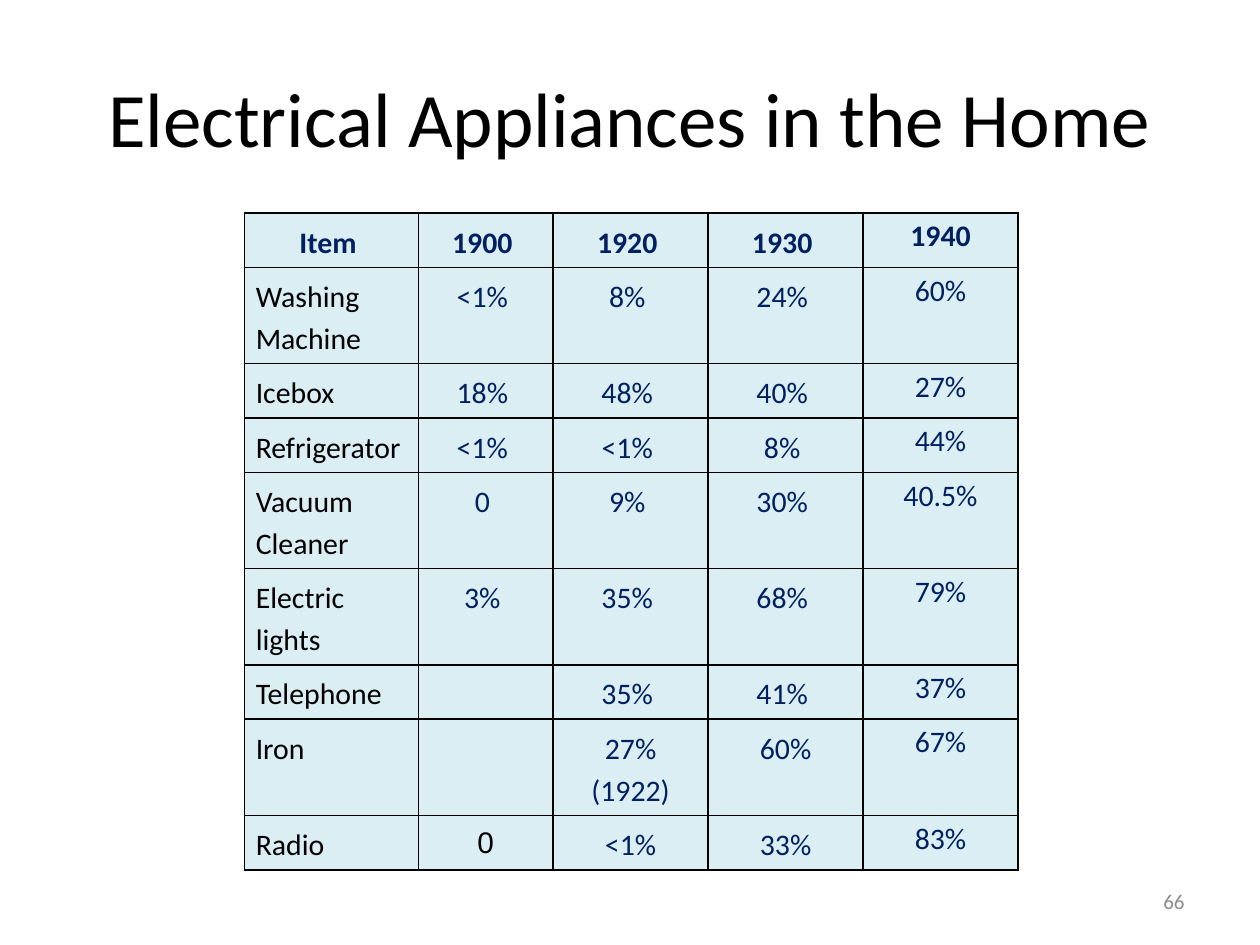
from dataclasses import dataclass

from lxml.etree import SubElement
from pptx import Presentation
from pptx.dml.color import RGBColor
from pptx.enum.text import MSO_ANCHOR, PP_ALIGN
from pptx.oxml.ns import qn
from pptx.slide import Slide
from pptx.table import _Cell
from pptx.text.text import TextFrame
from pptx.util import Inches, Pt


@dataclass(frozen=True)
class Theme:
    """Fonts, colours and type sizes of the slide."""
    font: str = "Calibri"
    alternate_font: str = "Arial"
    ink: str = "000000"
    navy: str = "002060"
    grey: str = "8C8C8C"
    cell_fill: str = "DBEEF4"
    title_size: float = 44
    table_size: float = 17
    number_size: float = 12
    border_width: float = 1
    line_spacing: float = 1.15


@dataclass(frozen=True)
class Area:
    """A rectangle in inches."""
    left: float
    top: float
    width: float
    height: float

    def lengths(self) -> tuple:
        """Return left, top, width and height as slide lengths."""
        return tuple(Inches(n) for n in (self.left, self.top, self.width, self.height))


@dataclass(frozen=True)
class Style:
    """Look of one run and its paragraph."""
    size: float
    color: str
    align: PP_ALIGN = PP_ALIGN.CENTER
    bold: bool = False
    font: str = "Calibri"


@dataclass(frozen=True)
class Appliance:
    """One table row: an item and its share of homes by year."""
    item: str
    shares: tuple[str, ...]
    lines: int = 1


THEME = Theme()
TITLE_AREA = Area(0.5, 0.3, 9, 1.25)
TABLE_AREA = Area(1.94, 1.69, 6.14, 4.97)
NUMBER_AREA = Area(7.17, 6.95, 2.33, 0.4)
COLUMN_WIDTHS = (1.38, 1.07, 1.23, 1.23, 1.23)
ROW_HEIGHTS = {1: 0.41, 2: 0.73}
ROWS = (
    Appliance("Item ", ("1900 ", "1920 ", "1930 ", "1940")),
    Appliance("Washing Machine", ("<1% ", "8% ", "24% ", "60%"), 2),
    Appliance("Icebox", ("18% ", "48% ", "40% ", "27%")),
    Appliance("Refrigerator", ("<1% ", "<1% ", "8% ", "44%")),
    Appliance("Vacuum Cleaner", ("0 ", "9% ", "30% ", "40.5%"), 2),
    Appliance("Electric lights", ("3% ", "35% ", "68% ", "79%"), 2),
    Appliance("Telephone", ("", "35% ", "41% ", "37%")),
    Appliance("Iron", ("", "27% (1922)", "60%", "67%"), 2),
    Appliance("Radio", ("0", "<1%", "33%", "83%")),
)


def write(frame: TextFrame, text: str, style: Style) -> None:
    """Add one styled run to the first paragraph of a frame."""
    para = frame.paragraphs[0]
    para.alignment = style.align
    span = para.add_run()
    span.text = text
    span.font.name = style.font
    span.font.size = Pt(style.size)
    span.font.bold = style.bold
    span.font.color.rgb = RGBColor.from_string(style.color)


def draw_borders(cell: _Cell) -> None:
    """Rule all four sides of a cell ahead of its fill."""
    properties = cell._tc.get_or_add_tcPr()
    for position, side in enumerate(("a:lnL", "a:lnR", "a:lnT", "a:lnB")):
        line = SubElement(properties, qn(side), w=str(Pt(THEME.border_width)))
        solid = SubElement(line, qn("a:solidFill"))
        SubElement(solid, qn("a:srgbClr"), val=THEME.ink)
        properties.insert(position, line)


def cell_style(row: int, column: int) -> Style:
    """Choose the look of a cell from its place in the table."""
    if row == 0:
        return Style(THEME.table_size, THEME.navy, bold=True)
    if column == 0:
        return Style(THEME.table_size, THEME.ink, PP_ALIGN.LEFT)
    if (row, column) == (len(ROWS) - 1, 1):
        return Style(THEME.table_size, THEME.ink, font=THEME.alternate_font)
    return Style(THEME.table_size, THEME.navy)


def draw_cell(cell: _Cell, text: str, style: Style, inset: bool) -> None:
    """Fill, rule and write one table cell."""
    cell.fill.solid()
    cell.fill.fore_color.rgb = RGBColor.from_string(THEME.cell_fill)
    draw_borders(cell)
    cell.margin_left = cell.margin_right = Inches(0.09 if inset else 0)
    cell.margin_top = cell.margin_bottom = Inches(0.05 if inset else 0)
    para = cell.text_frame.paragraphs[0]
    para.line_spacing = THEME.line_spacing
    if text:
        write(cell.text_frame, text, style)
    else:
        para.font.size = Pt(style.size)


def draw_table(slide: Slide) -> None:
    """Draw the table of appliances by year."""
    frame = slide.shapes.add_table(len(ROWS), len(COLUMN_WIDTHS), *TABLE_AREA.lengths())
    table = frame.table
    for column, width in zip(table.columns, COLUMN_WIDTHS):
        column.width = Inches(width)
    last_column = len(COLUMN_WIDTHS) - 1
    for row, appliance in enumerate(ROWS):
        table.rows[row].height = Inches(ROW_HEIGHTS[appliance.lines])
        for column, text in enumerate((appliance.item, *appliance.shares)):
            draw_cell(table.cell(row, column), text, cell_style(row, column),
                      inset=column != last_column)


def draw_title(slide: Slide, text: str) -> None:
    """Place and write the title."""
    title = slide.shapes.title
    title.left, title.top, title.width, title.height = TITLE_AREA.lengths()
    title.text_frame.vertical_anchor = MSO_ANCHOR.MIDDLE
    write(title.text_frame, text, Style(THEME.title_size, THEME.ink))


def draw_page_number(slide: Slide, text: str) -> None:
    """Write the page number at the lower right."""
    box = slide.shapes.add_textbox(*NUMBER_AREA.lengths())
    box.text_frame.word_wrap = True
    box.text_frame.vertical_anchor = MSO_ANCHOR.MIDDLE
    write(box.text_frame, text, Style(THEME.number_size, THEME.grey, PP_ALIGN.RIGHT))


def main() -> None:
    """Build and save the deck."""
    deck = Presentation()
    deck.slide_width, deck.slide_height = Inches(10), Inches(7.5)
    page = deck.slides.add_slide(deck.slide_layouts[5])
    draw_title(page, "Electrical Appliances in the Home")
    draw_table(page)
    draw_page_number(page, "66")
    deck.save("out.pptx")


if __name__ == "__main__":
    main()
